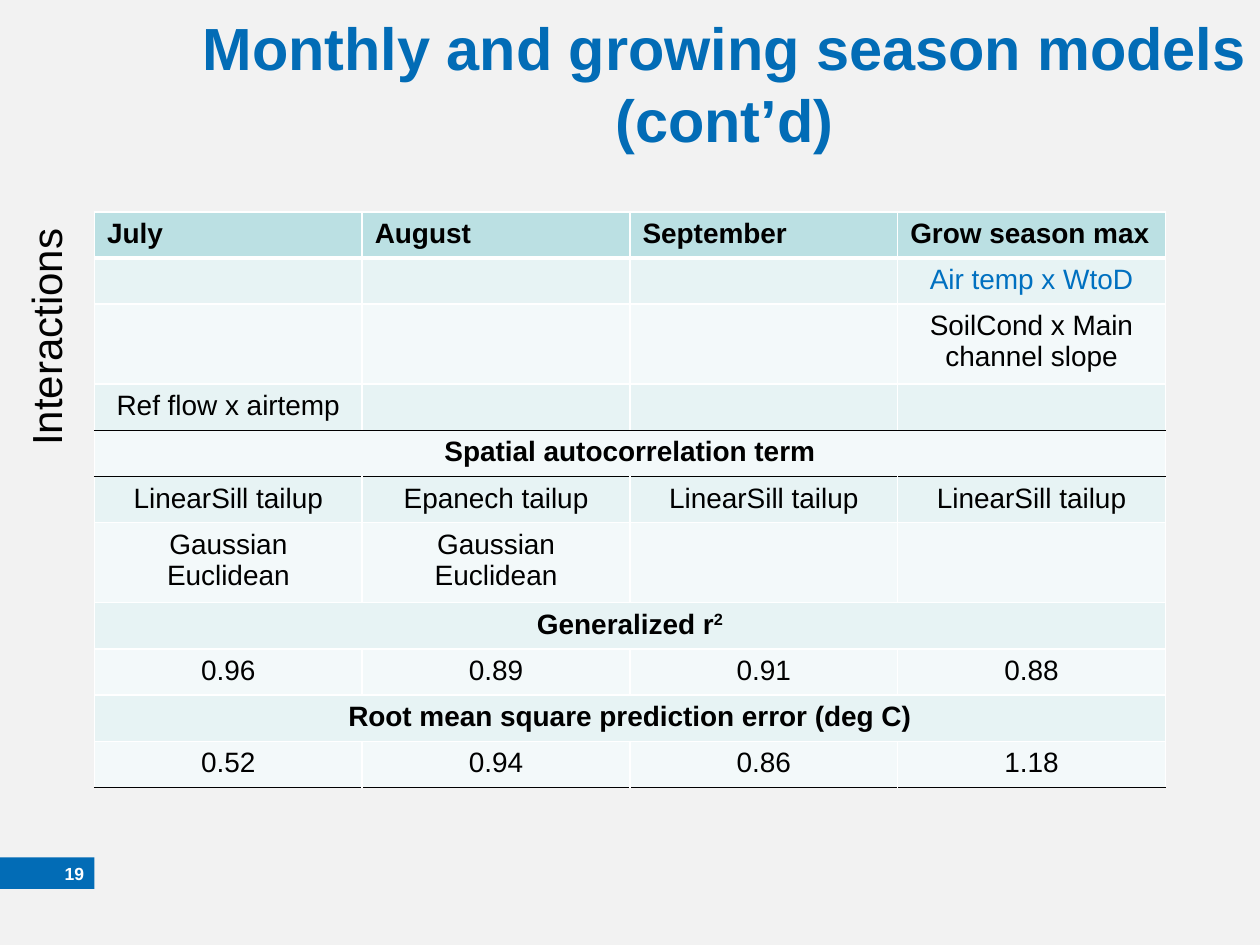
from typing import NamedTuple

from lxml.etree import SubElement
from pptx import Presentation
from pptx.dml.color import RGBColor
from pptx.enum.shapes import MSO_SHAPE
from pptx.enum.text import MSO_ANCHOR, PP_ALIGN
from pptx.oxml.ns import qn
from pptx.util import Pt

WHITE = RGBColor(0xFF, 0xFF, 0xFF)
BLACK = RGBColor(0x00, 0x00, 0x00)
GREY = RGBColor(0xF2, 0xF2, 0xF2)
BLUE = RGBColor(0x02, 0x6C, 0xB6)
SKY = RGBColor(0x00, 0x70, 0xC0)
TEAL = RGBColor(0xBB, 0xE0, 0xE3)
BANDS = (RGBColor(0xF3, 0xF9, 0xFA), RGBColor(0xE7, 0xF3, 0xF4))
FONT = "Arial"


class Box(NamedTuple):
    left: float
    top: float
    width: float
    height: float


class Style(NamedTuple):
    size: float
    color: RGBColor = BLACK
    bold: bool = False
    align: PP_ALIGN = PP_ALIGN.CENTER


class Row(NamedTuple):
    cells: tuple[str, ...]      # a single text spans the whole row
    rule: bool = False          # black line below
    color: RGBColor = BLACK


COLS = 4
CELL = Style(16)
HEAD = Style(16, bold=True, align=PP_ALIGN.LEFT)
SPAN = Style(16, bold=True)
ROWS = (
    Row(("July", "August", "September", "Grow season max")),
    Row(("", "", "", "Air temp x WtoD"), color=SKY),
    Row(("", "", "", "SoilCond x Main channel slope")),
    Row(("Ref flow x airtemp", "", "", ""), rule=True),
    Row(("Spatial autocorrelation term",), rule=True),
    Row(("LinearSill tailup", "Epanech tailup",
         "LinearSill tailup", "LinearSill tailup")),
    Row(("Gaussian Euclidean", "Gaussian Euclidean", "", "")),
    Row(("Generalized r^2",)),
    Row(("0.96", "0.89", "0.91", "0.88")),
    Row(("Root mean square prediction error (deg C)",)),
    Row(("0.52", "0.94", "0.86", "1.18"), rule=True),
)


def add_run(para, text: str, style: Style):
    run = para.add_run()
    run.text = text
    font = run.font
    font.name, font.size, font.bold = FONT, Pt(style.size), style.bold
    font.color.rgb = style.color
    return run


def add_text(slide, box: Box, lines: tuple[str, ...], style: Style,
             inset: float = 3.6, anchor: MSO_ANCHOR = MSO_ANCHOR.TOP):
    frame = slide.shapes.add_textbox(*map(Pt, box)).text_frame
    frame.word_wrap = True
    frame.vertical_anchor = anchor
    frame.margin_left = frame.margin_right = Pt(inset)
    frame.margin_top = frame.margin_bottom = Pt(inset)
    para = frame.paragraphs[0]
    para.alignment = style.align
    for num, line in enumerate(lines):
        if num:
            para.add_line_break()
        add_run(para, line, style)
    return frame


def add_edge(cell, side: str, color: RGBColor, width: float) -> None:
    line = SubElement(cell._tc.get_or_add_tcPr(), qn(f"a:{side}"),
                      w=str(Pt(width)))
    fill = SubElement(line, qn("a:solidFill"))
    SubElement(fill, qn("a:srgbClr"), val=str(color))


def fill_cell(cell, text: str, style: Style) -> None:
    para = cell.text_frame.paragraphs[0]
    para.alignment = style.align
    if not text:
        # An empty cell keeps the table's text size, so rows stay low
        SubElement(para._p, qn("a:endParaRPr"), sz=str(style.size * 100))
        return
    base, _, power = text.partition("^")
    add_run(para, base, style)
    if power:
        run = add_run(para, power, style)
        run.font._element.set("baseline", "30000")


def add_grid(slide, box: Box) -> None:
    table = slide.shapes.add_table(len(ROWS), COLS, *map(Pt, box)).table
    for col in table.columns:
        col.width = Pt(box.width / COLS)
    for num, row in enumerate(ROWS):
        table.rows[num].height = Pt(26)
        wide = len(row.cells) == 1
        style = HEAD if num == 0 else SPAN if wide else CELL
        over = BLACK if num and ROWS[num - 1].rule else WHITE
        under = BLACK if row.rule else WHITE
        for pos in range(COLS):
            cell = table.cell(num, pos)
            add_edge(cell, "lnL", WHITE, 1)
            add_edge(cell, "lnR", WHITE, 1)
            add_edge(cell, "lnT", over, 3 if num == 1 else 1)
            add_edge(cell, "lnB", under, 3 if num == 0 else 1)
            cell.fill.solid()
            cell.fill.fore_color.rgb = BANDS[num % 2] if num else TEAL
            text = row.cells[pos] if pos < len(row.cells) else ""
            fill_cell(cell, text, style._replace(color=row.color))
        if wide:
            table.cell(num, 0).merge(table.cell(num, COLS - 1))


def main() -> None:
    deck = Presentation()
    deck.slide_width, deck.slide_height = Pt(720), Pt(540)
    slide = deck.slides.add_slide(deck.slide_layouts[6])

    # Background and page number bar
    back = slide.background.fill
    back.solid()
    back.fore_color.rgb = GREY
    bar = slide.shapes.add_shape(MSO_SHAPE.RECTANGLE,
                                 *map(Pt, Box(0, 490, 54, 18)))
    bar.shadow.inherit = False
    bar.fill.solid()
    bar.fill.fore_color.rgb = BLUE
    bar.line.fill.background()

    # Title
    add_text(slide, Box(108, 3, 612, 78),
             ("Monthly and growing season models", "(cont’d)"),
             Style(34, BLUE, True))

    # Model table
    add_grid(slide, Box(54, 121, 612, 329))

    # Page number
    add_text(slide, Box(0, 490, 48, 18), ("19",),
             Style(10, WHITE, True, PP_ALIGN.RIGHT), 0, MSO_ANCHOR.MIDDLE)

    # Side label, reading upwards
    side = add_text(slide, Box(8, 112, 44, 150), ("Interactions",),
                    Style(24, align=PP_ALIGN.LEFT), 7.2)
    side._txBody.bodyPr.set("vert", "vert270")

    deck.save("out.pptx")


if __name__ == "__main__":
    main()
